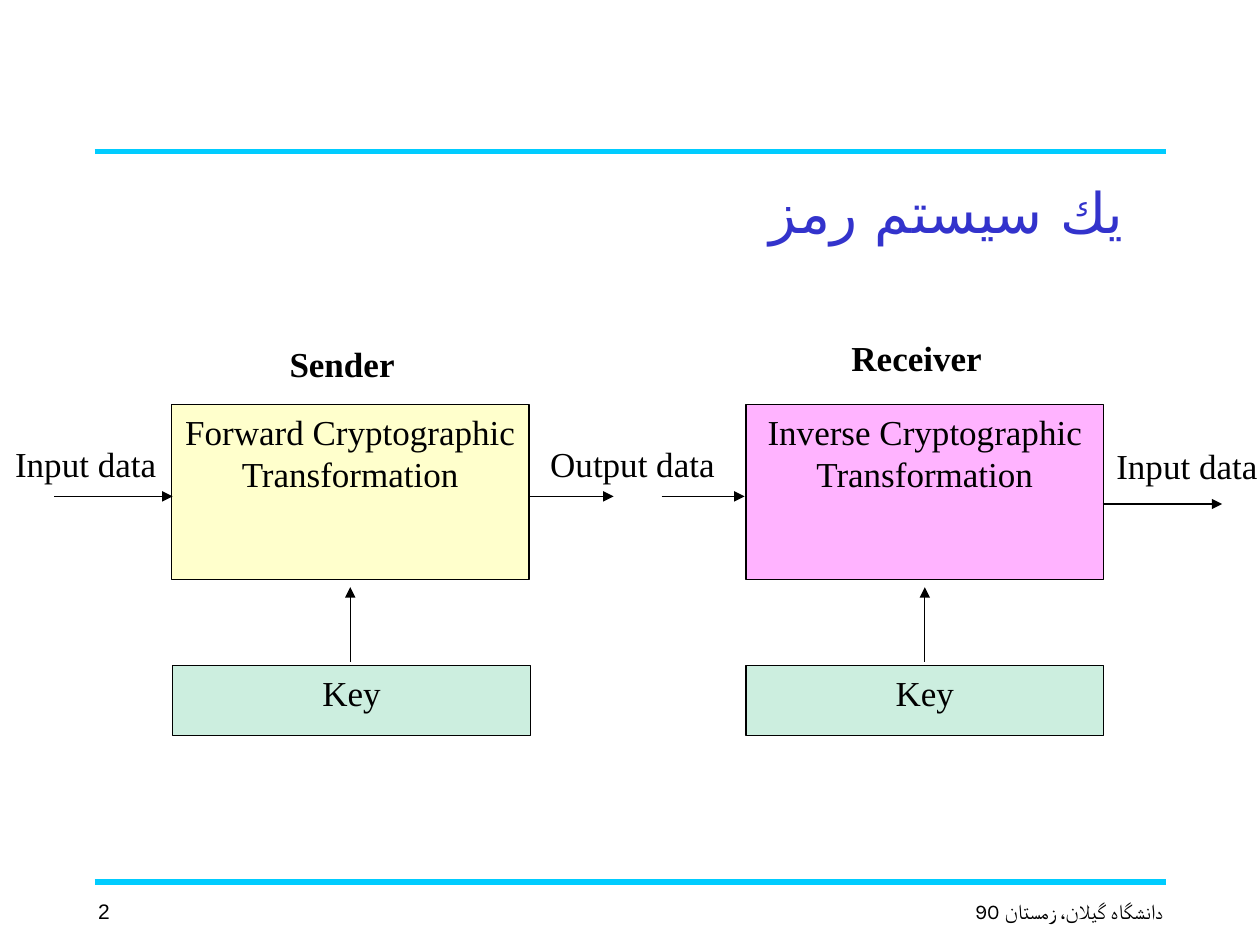
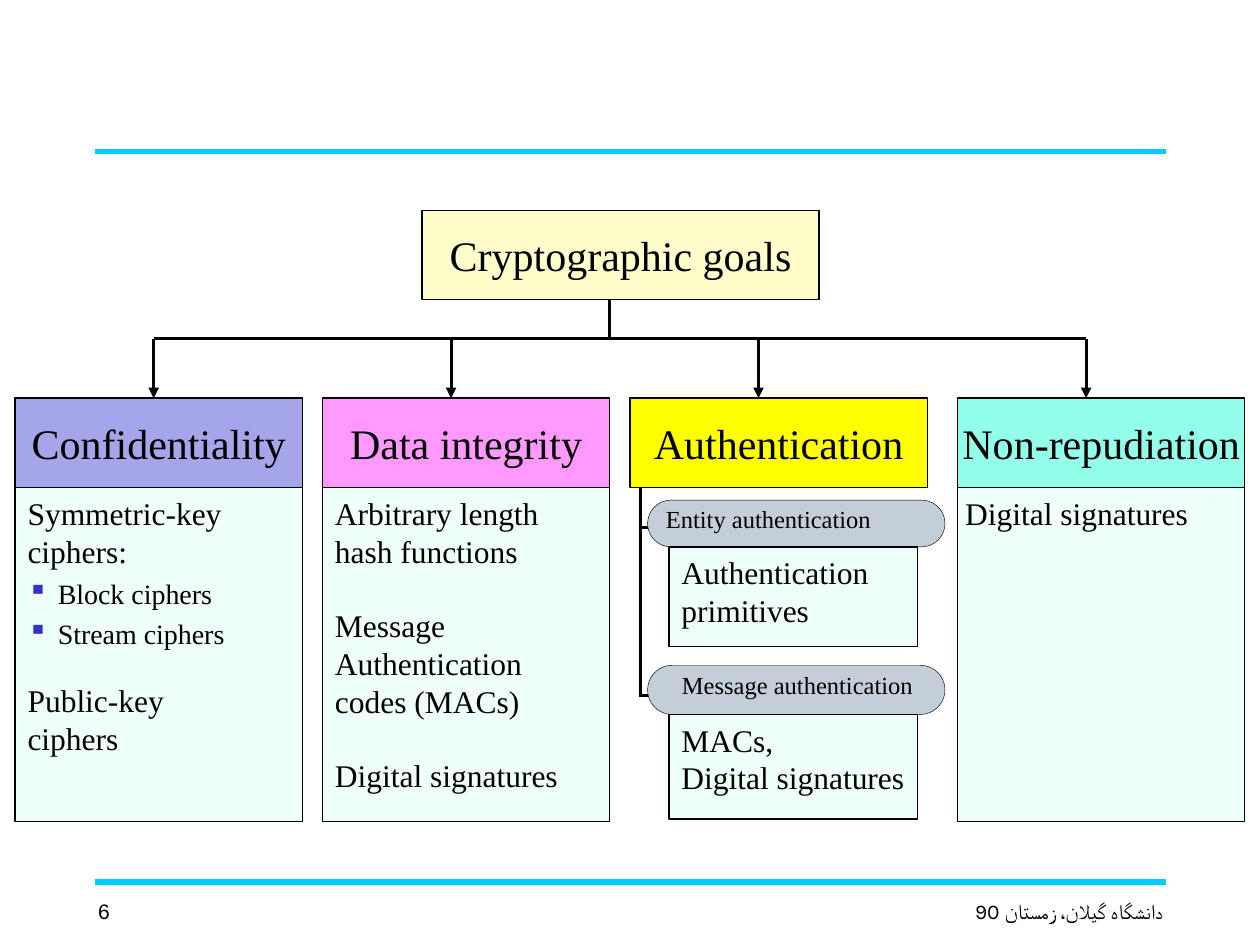
from lxml.etree import SubElement
from pptx import Presentation
from pptx.dml.color import RGBColor
from pptx.enum.shapes import MSO_CONNECTOR, MSO_SHAPE
from pptx.enum.text import MSO_ANCHOR, MSO_AUTO_SIZE, PP_ALIGN
from pptx.oxml.ns import qn
from pptx.util import Emu, Pt

EMU_PER_PX = 9144
SERIF = "Times New Roman"
BLACK, CYAN, BLUE = "000000", "00CCFF", "3333CC"
CREAM, MINT, GREY, PALE = "FFFFCC", "CCEEDF", "C4CED8", "A7FFE8"
PALE_ALPHA = 18
LEFT, CENTER, RIGHT = PP_ALIGN.LEFT, PP_ALIGN.CENTER, PP_ALIGN.RIGHT
TOP, MIDDLE = MSO_ANCHOR.TOP, MSO_ANCHOR.MIDDLE
RECT, PILL = MSO_SHAPE.RECTANGLE, MSO_SHAPE.ROUNDED_RECTANGLE
TITLE_ONLY, BLANK = 5, 6
FOOTER = "دانشگاه گيلان، زمستان 90"

BULLET = {"size": 16, "line_spacing": 1.2, "bullet": "▪"}


def px(n):
    return Emu(n * EMU_PER_PX)


def color(hex_value):
    return RGBColor.from_string(hex_value)


def set_all(target, values):
    for name, value in values.items():
        setattr(target, name, value)


class Deck:
    def __init__(self, width, height):
        self.prs = Presentation()
        set_all(self.prs, {"slide_width": px(width), "slide_height": px(height)})
        self.s = None

    def slide(self, number, title=None):
        layout = self.prs.slide_layouts[TITLE_ONLY if title else BLANK]
        self.s = self.prs.slides.add_slide(layout)
        for y in (700, 120):
            self.line(75, y, 925, y, CYAN, 3)
        if title:
            self.title(title)
        self.text(225, 708, 708, 50, [FOOTER], size=12, font="Karla", align=RIGHT)
        self.text(7, 708, 151, 50, [number], size=12, font="Arial")

    def title(self, text):
        sp = self.s.shapes.title
        set_all(sp, {"left": px(550), "top": px(136), "width": px(352), "height": px(64)})
        self.fill_text(sp.text_frame, [text], size=32, font="DejaVu Sans", ink=BLUE,
                       align=RIGHT, rtl=True)

    def fill_text(self, tf, paragraphs, size=20, font=SERIF, ink=BLACK, bold=False,
                  align=CENTER, anchor=TOP, wrap=True, rtl=False):
        set_all(tf, {"word_wrap": wrap, "vertical_anchor": anchor,
                     "auto_size": MSO_AUTO_SIZE.NONE})
        for i, item in enumerate(paragraphs):
            text, fmt = (item, {}) if isinstance(item, str) else item
            p = tf.add_paragraph() if i else tf.paragraphs[0]
            p.alignment = align
            if "before" in fmt:
                p.space_before = Pt(fmt["before"])
            if "line_spacing" in fmt:
                p.line_spacing = fmt["line_spacing"]
            if "bullet" in fmt:
                self.bullet(p, fmt["bullet"])
            if rtl:
                p._p.get_or_add_pPr().set("rtl", "1")
            r = p.add_run()
            r.text = text
            set_all(r.font, {"name": font, "size": Pt(fmt.get("size", size)), "bold": bold})
            r.font.color.rgb = color(ink)
            SubElement(r._r.get_or_add_rPr(), qn("a:cs")).set("typeface", font)

    def bullet(self, p, char):
        pPr = p._p.get_or_add_pPr()
        pPr.set("marL", str(px(24)))
        pPr.set("indent", str(-px(24)))
        clr = SubElement(pPr, qn("a:buClr"))
        SubElement(clr, qn("a:srgbClr")).set("val", BLUE)
        SubElement(pPr, qn("a:buChar")).set("char", char)

    def text(self, x, y, w, h, paragraphs, **style):
        sp = self.s.shapes.add_textbox(px(x), px(y), px(w), px(h))
        self.fill_text(sp.text_frame, paragraphs, **style)

    def box(self, x, y, w, h, fill, paragraphs=(), kind=RECT, weight=0.75,
            alpha=None, inset=10, **style):
        sp = self.s.shapes.add_shape(kind, px(x), px(y), px(w), px(h))
        sp.shadow.inherit = False
        sp.fill.solid()
        sp.fill.fore_color.rgb = color(fill)
        if alpha:
            clr = sp.element.spPr.find(qn("a:solidFill"))[0]
            SubElement(clr, qn("a:alpha")).set("val", str(alpha * 1000))
        sp.line.color.rgb = color(BLACK)
        sp.line.width = Pt(weight)
        if kind == PILL:
            sp.adjustments[0] = 0.5
        sp.text_frame.margin_left = px(inset)
        self.fill_text(sp.text_frame, paragraphs, **style)

    def panel(self, x, y, w, h, paragraphs, inset=10):
        self.box(x, y, w, h, PALE, paragraphs, alpha=PALE_ALPHA, inset=inset,
                 size=18, align=LEFT, wrap=False)

    def heading(self, x, y, w, fill, text):
        self.box(x, y, w, 71, fill, [text], size=24, anchor=MIDDLE, wrap=False)

    def line(self, x1, y1, x2, y2, ink=BLACK, weight=0.75, arrow=False):
        sp = self.s.shapes.add_connector(MSO_CONNECTOR.STRAIGHT, px(x1), px(y1), px(x2), px(y2))
        sp.line.color.rgb = color(ink)
        sp.line.width = Pt(weight)
        spPr = sp.element.spPr
        if arrow:
            SubElement(spPr.find(qn("a:ln")), qn("a:tailEnd")).set("type", "triangle")
        SubElement(spPr, qn("a:effectLst"))


def cipher_system(deck):
    deck.slide("2", "يك سيستم رمز")
    sides = [
        (136, 137, CREAM, "Forward", "Sender", 177, 267),
        (592, 592, "FFB3FF", "Inverse", "Receiver", 633, 262),
    ]
    for x, key_x, fill, direction, role, role_x, role_y in sides:
        deck.box(x, 321, 284, 139, fill, [f"{direction} Cryptographic Transformation"])
        deck.box(key_x, 528, 284, 56, MINT, ["Key"])
        deck.line(x + 142, 525, x + 142, 466, arrow=True)
        deck.text(role_x, role_y, 189, 54, [role], bold=True)
    for x1, x2, y in [(43, 137, 394), (421, 487, 394), (525, 591, 394), (875, 970, 400)]:
        deck.line(x1, y, x2, y, arrow=True)
    for x, y, w, label in [(-17, 346, 170, "Input data"), (417, 346, 170, "Output data"),
                           (867, 348, 150, "Input data")]:
        deck.text(x, y, w, 77, [label])


def cryptographic_goals(deck):
    deck.slide("6")
    deck.heading(335, 167, 315, CREAM, "Cryptographic goals")
    confidentiality = [
        "Symmetric-key", "ciphers:", ("Block ciphers", BULLET), ("Stream ciphers", BULLET),
        ("Public-key", {"before": 18}), "ciphers",
    ]
    integrity = [
        "Arbitrary length", "hash functions", ("Message", {"before": 21}), "Authentication",
        "codes (MACs)", ("Digital signatures", {"before": 21}),
    ]
    goals = [
        (12, 228, 122, "A5A5E9", "Confidentiality", confidentiality, 10),
        (256, 228, 358, "FF99FF", "Data integrity", integrity, 10),
        (500, 236, 602, "FFFF00", "Authentication", None, 10),
        (760, 228, 862, "93FFEA", "Non-repudiation", ["Digital signatures"], 6),
    ]
    deck.line(484, 238, 484, 269, weight=1.75)
    deck.line(122, 269, 862, 269, weight=1.75)
    for x, w, arrow_x, fill, name, means, inset in goals:
        if means:
            deck.panel(x, 387, w, 265, means, inset)
        deck.heading(x, 316, w, fill, name)
        deck.line(arrow_x, 269, arrow_x, 316, weight=1.75, arrow=True)

    deck.line(508, 553, 508, 387, weight=1.75)
    kinds = [
        (397, 37, 419, "Entity authentication", 513, 194, 395, 79,
         ["Authentication", "primitives"]),
        (528, 39, 552, "Message authentication", 508, 250, 527, 83,
         ["MACs,", "Digital signatures"]),
    ]
    for y, h, branch_y, name, name_x, name_w, name_y, panel_h, means in kinds:
        deck.line(516, branch_y, 508, branch_y, weight=1.75)
        deck.box(514, y, 236, h, GREY, kind=PILL, weight=0.25)
        deck.text(name_x, name_y, name_w, 34, [name], size=14, wrap=False)
        deck.panel(531, y + h, 197, panel_h, means)


def main():
    deck = Deck(1000, 750)
    cipher_system(deck)
    cryptographic_goals(deck)
    deck.prs.save("out.pptx")


if __name__ == "__main__":
    main()
